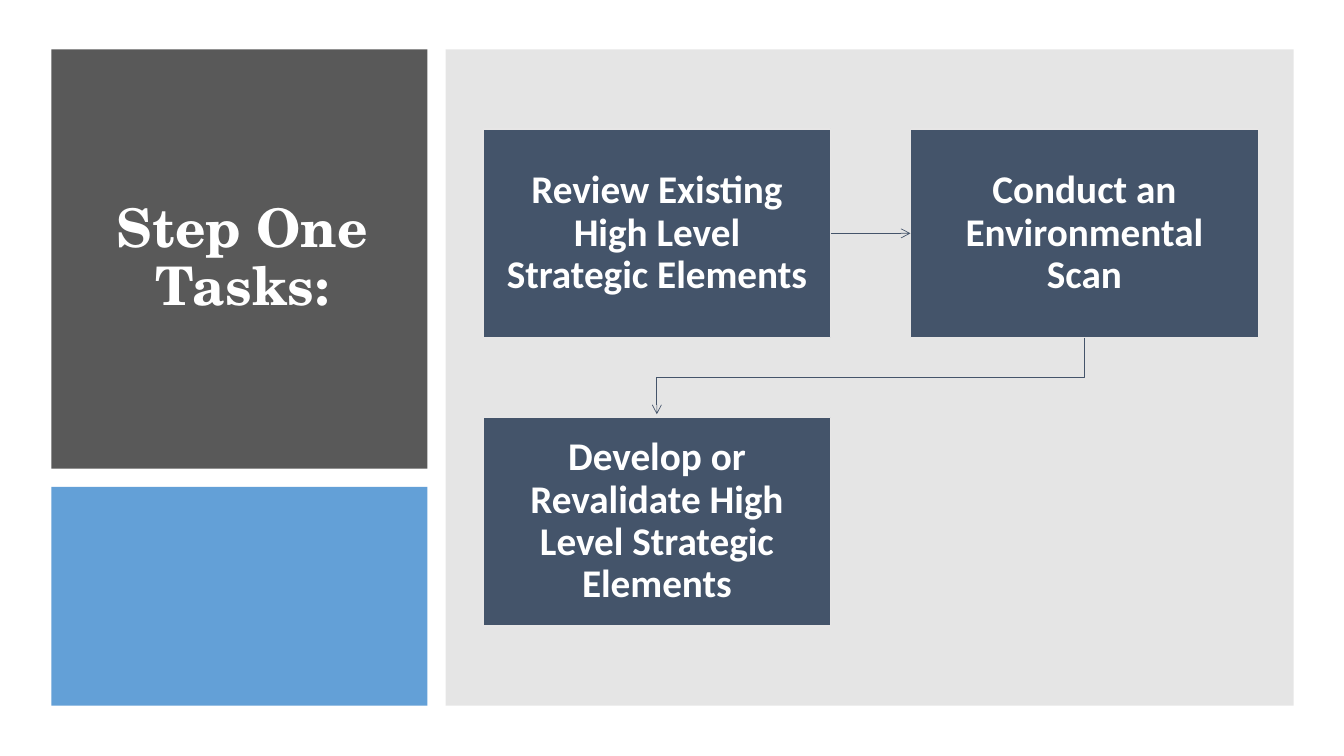
"""Build the slide that shows the tasks of step one as a short flow."""
from lxml.etree import SubElement
from pptx import Presentation
from pptx.dml.color import RGBColor
from pptx.enum.shapes import MSO_CONNECTOR, MSO_SHAPE
from pptx.enum.text import MSO_ANCHOR, MSO_AUTO_SIZE, PP_ALIGN
from pptx.oxml.ns import qn
from pptx.util import Inches, Pt

TITLE = "Step One Tasks:"
TITLE_BOX = (0.85, 0.8, 3.11, 3.54)
TASKS = [
    "Review Existing High Level Strategic Elements",
    "Conduct an Environmental Scan",
    "Develop or Revalidate High Level Strategic Elements",
]
COLORS = {
    "charcoal": "595959",
    "blue": "5B9BD5",
    "gray": "808080",
    "navy": "44546A",
    "edge": "E7E6E6",
    "white": "FFFFFF",
}
PANELS = [
    ((0.51, 0.49, 3.73, 4.16), "charcoal", 100),
    ((0.51, 4.83, 3.73, 2.17), "blue", 95),
    ((4.42, 0.49, 8.41, 6.51), "gray", 20),
]
COLUMNS = 2
TASK_LEFT, TASK_TOP = 4.79, 1.28
TASK_WIDTH, TASK_HEIGHT = 3.45, 2.07
COLUMN_STEP, ROW_STEP = 4.24, 2.86
ARROW_GAP = 0.03
TITLE_FONT = {"name": "TeX Gyre Schola", "size": Pt(38), "bold": True}
TASK_FONT = {"name": "Calibri", "size": Pt(28), "bold": True}
TASK_FRAME = {
    "margin_left": Inches(0.17),
    "margin_right": Inches(0.17),
    "margin_top": Inches(0.18),
    "margin_bottom": Inches(0.18),
}


def color(name):
    return RGBColor.from_string(COLORS[name])


def add_box(slide, place, fill, opacity=100):
    box = slide.shapes.add_shape(MSO_SHAPE.RECTANGLE, *map(Inches, place))
    box.shadow.inherit = False
    box.fill.solid()
    box.fill.fore_color.rgb = color(fill)
    box.line.fill.background()
    if opacity < 100:
        rgb = box.fill._xPr.find(qn("a:solidFill"))[0]
        SubElement(rgb, qn("a:alpha"), val=str(opacity * 1000))
    return box


def write(shape, text, font, frame_format):
    frame = shape.text_frame
    frame.text = text
    frame_format = {
        "word_wrap": True,
        "auto_size": MSO_AUTO_SIZE.NONE,
        "vertical_anchor": MSO_ANCHOR.MIDDLE,
        **frame_format,
    }
    for key, value in frame_format.items():
        setattr(frame, key, value)
    paragraph = frame.paragraphs[0]
    paragraph.alignment = PP_ALIGN.CENTER
    paragraph.line_spacing = 0.9
    run_font = paragraph.runs[0].font
    for key, value in font.items():
        setattr(run_font, key, value)
    run_font.color.rgb = color("white")


def style_arrow(arrow):
    arrow.line.color.rgb = color("navy")
    arrow.line.width = Pt(0.5)
    SubElement(arrow.line._get_or_add_ln(), qn("a:tailEnd"), type="arrow")


def add_task(slide, index, text):
    row, column = divmod(index, COLUMNS)
    left = TASK_LEFT + column * COLUMN_STEP
    top = TASK_TOP + row * ROW_STEP
    task = add_box(slide, (left, top, TASK_WIDTH, TASK_HEIGHT), "navy")
    task.line.color.rgb = color("edge")
    task.line.width = Pt(1)
    write(task, text, TASK_FONT, TASK_FRAME)
    return task


def join_across(slide, source, target):
    arrow = slide.shapes.add_connector(MSO_CONNECTOR.STRAIGHT, 0, 0, 0, 0)
    arrow.begin_connect(source, 3)
    arrow.end_connect(target, 1)
    style_arrow(arrow)
    SubElement(arrow._element.spPr, qn("a:effectLst"))


def join_down(slide, source, target):
    start_x = source.left + source.width // 2
    end_x = target.left + target.width // 2
    start_y = source.top + source.height
    middle_y = (start_y + target.top) // 2
    end_y = target.top - Inches(ARROW_GAP)
    path = slide.shapes.build_freeform(start_x, start_y)
    path.add_line_segments(
        [(start_x, middle_y), (end_x, middle_y), (end_x, end_y)], close=False
    )
    arrow = path.convert_to_shape()
    arrow.shadow.inherit = False
    arrow.fill.background()
    style_arrow(arrow)


def main():
    deck = Presentation()
    deck.slide_width, deck.slide_height = Inches(13.33), Inches(7.5)
    slide = deck.slides.add_slide(deck.slide_layouts[5])
    for place, fill, opacity in PANELS:
        add_box(slide, place, fill, opacity)

    title = slide.shapes.title
    title.left, title.top, title.width, title.height = map(Inches, TITLE_BOX)
    write(title, TITLE, TITLE_FONT, {})
    slide.shapes._spTree.append(title._element)

    review, scan, develop = [
        add_task(slide, index, text) for index, text in enumerate(TASKS)
    ]
    join_across(slide, review, scan)
    join_down(slide, scan, develop)
    deck.save("out.pptx")


if __name__ == "__main__":
    main()
